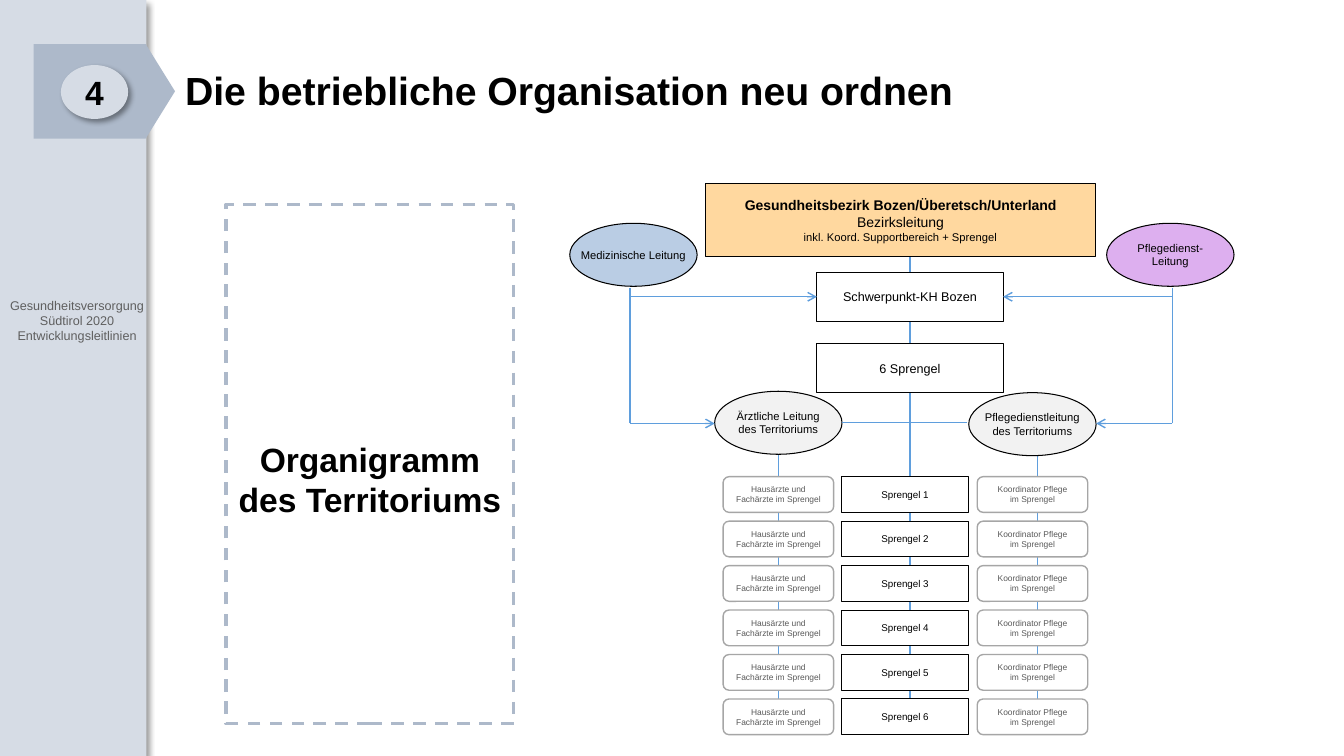
"""Build the slide with the organisation chart of the health district's territory."""
import lxml.etree
import pptx
import pptx.dml.color
import pptx.enum.dml
import pptx.enum.shapes
import pptx.enum.text
import pptx.oxml
import pptx.oxml.ns
import pptx.util

Pt = pptx.util.Pt
Kind = pptx.enum.shapes.MSO_SHAPE
Align = pptx.enum.text.PP_ALIGN
Middle = pptx.enum.text.MSO_ANCHOR.MIDDLE
rgb = pptx.dml.color.RGBColor.from_string
qn = pptx.oxml.ns.qn


class Theme:
    font = "Arial"
    ink, white = "000000", "FFFFFF"
    side, steel = "D6DCE5", "ADB9CA"
    note, soft, rim = "5F5F5F", "595959", "A6A6A6"
    link, pale = "5F9EDD", "F2F2F2"
    sand, blue, pink = "FFD89F", "BACDE4", "DDAFEF"
    title, head, lead, body, small, row, tiny = 28, 24, 10, 9, 8, 7, 6
    thin, line, thick = 0.75, 1, 2.25


deck = pptx.Presentation()
deck.slide_width, deck.slide_height = Pt(960), Pt(540)
slide = deck.slides.add_slide(deck.slide_layouts[5])
shapes = slide.shapes


def box(kind, place, text="", size=Theme.small, fill=None, edge=None,
        width=Theme.thin, color=Theme.ink, bold=False, wrap=False):
    """Add a shape, or a text box when kind is None, with centred text."""
    spot = [Pt(v) for v in place]
    if kind is None:
        shape = shapes.add_textbox(*spot)
    else:
        shape = shapes.add_shape(kind, *spot)
        shape.shadow.inherit = False
    for part, tone in ((shape.fill, fill), (shape.line.fill, edge)):
        if tone:
            part.solid()
            part.fore_color.rgb = rgb(tone)
        else:
            part.background()
    if edge:
        shape.line.width = Pt(width)
    frame = shape.text_frame
    frame.word_wrap = wrap
    frame.vertical_anchor = Middle
    if text:
        frame.text = text
        for para in frame.paragraphs:
            para.alignment = Align.CENTER
            para.font.name = Theme.font
            para.font.size = Pt(size)
            para.font.bold = bold
            para.font.color.rgb = rgb(color)
    return shape


def line(x1, y1, x2, y2, arrow=False):
    """Add a straight connector, with an arrowhead at its end on request."""
    link = shapes.add_connector(pptx.enum.shapes.MSO_CONNECTOR.STRAIGHT,
                                Pt(x1), Pt(y1), Pt(x2), Pt(y2))
    link.line.color.rgb = rgb(Theme.link)
    link.line.width = Pt(Theme.line)
    if arrow:
        tail = lxml.etree.SubElement(link.line._get_or_add_ln(), qn("a:tailEnd"))
        tail.set("type", "arrow")
    lxml.etree.SubElement(link._element.spPr, qn("a:effectLst"))
    return link


side = box(Kind.RECTANGLE, (0, 0, 104.5, 540), fill=Theme.side)
label = box(None, (0, 208, 110, 42), "Gesundheitsversorgung Südtirol 2020\nEntwicklungsleitlinien",
            Theme.body, color=Theme.note, wrap=True)
label.text_frame.margin_left = label.text_frame.margin_right = 0

title = shapes.title
title.left, title.top, title.width, title.height = Pt(125), Pt(29), Pt(769), Pt(74)
title.text_frame.text = "Die betriebliche Organisation neu ordnen"
title.text_frame.vertical_anchor = Middle
head = title.text_frame.paragraphs[0]
head.alignment = Align.LEFT
head.line_spacing = 0.9
head.font.name = Theme.font
head.font.size = Pt(Theme.title)
head.font.bold = True
head.font.color.rgb = rgb(Theme.ink)

flag = box(Kind.PENTAGON, (24, 31.5, 101, 67.5), fill=Theme.steel)
flag.adjustments[0] = 0.31
badge = box(Kind.OVAL, (43.5, 46.5, 48, 38.5), "4", Theme.head, Theme.side, bold=True)
for shape in (side, badge):
    glow = pptx.oxml.parse_xml(
        f'<a:outerShdw {pptx.oxml.ns.nsdecls("a")} blurRad="50800" dist="38100" '
        'dir="2700000" algn="tl" rotWithShape="0"><a:srgbClr val="000000">'
        '<a:alpha val="40000"/></a:srgbClr></a:outerShdw>')
    shape._element.spPr.find(qn("a:effectLst")).append(glow)

panel = box(Kind.RECTANGLE, (161.5, 146, 205.5, 371), "Organigramm des Territoriums",
            Theme.head, edge=Theme.steel, width=Theme.thick, bold=True, wrap=True)
panel.line.dash_style = pptx.enum.dml.MSO_LINE.DASH
panel.text_frame.margin_top = Pt(25)

top, step, rows = 340.5, 31.76, 6
last = top + step * (rows - 1)
line(650, 183.5, 650, last)
line(741, 325, 741, last)
stem = line(556, 325, 556, last)

unit = box(Kind.RECTANGLE, (504, 131, 278.5, 52.5),
           "Gesundheitsbezirk Bozen/Überetsch/Unterland\nBezirksleitung\n"
           "inkl. Koord. Supportbereich + Sprengel", Theme.lead, Theme.sand, Theme.ink)
unit.text_frame.paragraphs[0].font.bold = True
unit.text_frame.paragraphs[2].font.size = Pt(Theme.small)

clinic, area = [
    box(Kind.RECTANGLE, (583.5, y, 133, 35), text, Theme.body, Theme.white, Theme.ink)
    for y, text in ((194.5, "Schwerpunkt-KH Bozen"), (245.5, "6 Sprengel"))]

for x, y, tone, text in (
        (407, 159.5, Theme.blue, "Medizinische Leitung"),
        (790.5, 159.5, Theme.pink, "Pflegedienst-\nLeitung"),
        (510.5, 279.5, Theme.pale, "Ärztliche Leitung\ndes Territoriums"),
        (692, 280.5, Theme.pale, "Pflegedienstleitung\ndes Territoriums")):
    box(Kind.OVAL, (x, y, 91, 45), text, Theme.small, tone, Theme.ink)

for x, site, port, tip in ((450, 1, 583.5, 510.5), (837.5, 3, 716.5, 783)):
    line(x, 206, x, 302.5)
    line(x, 212, port, 212, True).end_connect(clinic, site)
    line(x, 302.5, tip, 302.5, True)
line(601.5, 302, 691, 302)

for i in range(rows):
    y = top + step * i
    box(Kind.RECTANGLE, (601, y, 91, 25.5), f"Sprengel {i + 1}", Theme.row,
        Theme.white, Theme.ink)
    doctor, nurse = [
        box(Kind.ROUNDED_RECTANGLE, (x, y, 79, 25.5), text, Theme.tiny, Theme.white,
            Theme.rim, Theme.line, Theme.soft, wrap=True)
        for x, text in ((516.5, "Hausärzte und Fachärzte im Sprengel"),
                        (698, "Koordinator Pflege\nim Sprengel"))]
stem.end_connect(doctor, 0)

deck.save("out.pptx")
